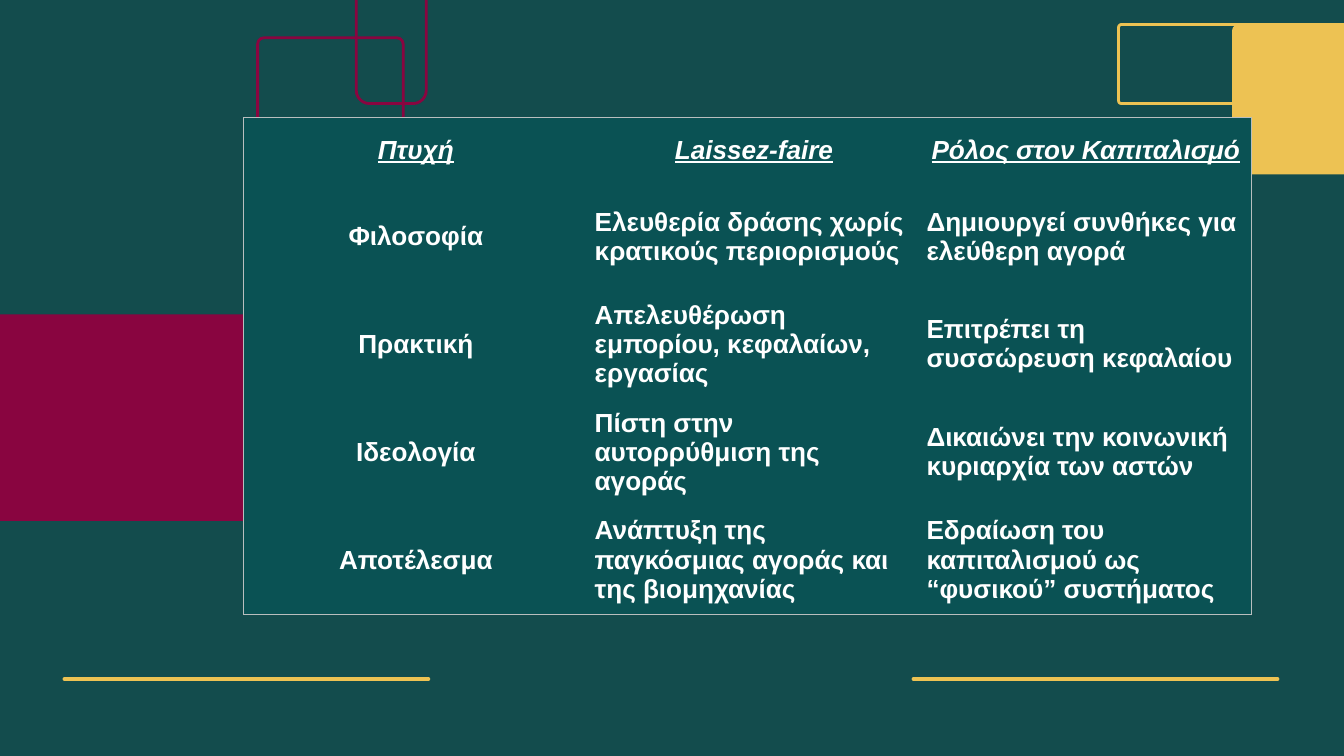
from lxml.etree import SubElement
from pptx import Presentation
from pptx.dml.color import RGBColor
from pptx.enum.shapes import MSO_CONNECTOR, MSO_SHAPE
from pptx.enum.text import MSO_ANCHOR, PP_ALIGN
from pptx.oxml import parse_xml
from pptx.oxml.ns import nsdecls, qn
from pptx.util import Pt

PX = 9525
SLIDE_WIDTH, SLIDE_HEIGHT = 1920, 1080
COLORS = {
    "background": "134C4D",
    "panel": "0A5254",
    "border": "B9BEBE",
    "text": "FFFFFF",
    "gold": "EDC253",
    "plum": "890540",
}

ROWS = [
    ("Πτυχή", "Laissez-faire", "Ρόλος στον Καπιταλισμό"),
    ("Φιλοσοφία", "Ελευθερία δράσης χωρίς κρατικούς περιορισμούς",
     "Δημιουργεί συνθήκες για ελεύθερη αγορά"),
    ("Πρακτική", "Απελευθέρωση εμπορίου, κεφαλαίων, εργασίας",
     "Επιτρέπει τη συσσώρευση κεφαλαίου"),
    ("Ιδεολογία", "Πίστη στην αυτορρύθμιση της αγοράς",
     "Δικαιώνει την κοινωνική κυριαρχία των αστών"),
    ("Αποτέλεσμα", "Ανάπτυξη της παγκόσμιας αγοράς και της βιομηχανίας",
     "Εδραίωση του καπιταλισμού ως “φυσικού” συστήματος"),
]
TABLE_LEFT, TABLE_TOP = 348, 168
COLUMN_WIDTHS = [492, 474, 474]
ROW_HEIGHTS = [93] + [154] * 4

RULE_TOP, RULE_LENGTH = 970, 520
RULE_LEFTS = [1305, 92]
# left, top, width, height, corner radius, color, filled
BLOCKS = [
    (-144, 449, 587, 295, 6, "plum", True),
    (1760, 35, 228, 214, 9, "gold", True),
    (1598, 35, 550, 113, 4, "gold", False),
    (509, -26, 100, 174, 19, "plum", False),
    (368, 54, 208, 196, 9, "plum", False),
]
BODY_FONT = {"name": "Arial", "size": Pt(28), "bold": True, "italic": False, "underline": False}
HEADER_FONT = BODY_FONT | {"italic": True, "underline": True}


def rgb(name):
    return RGBColor.from_string(COLORS[name])


def add_rule(slide, left):
    rule = slide.shapes.add_connector(
        MSO_CONNECTOR.STRAIGHT, left * PX, RULE_TOP * PX,
        (left + RULE_LENGTH) * PX, RULE_TOP * PX)
    rule.line.color.rgb = rgb("gold")
    rule.line.width = Pt(4)
    rule.line._get_or_add_ln().set("cap", "rnd")
    SubElement(rule._element.spPr, qn("a:effectLst"))


def add_block(slide, left, top, width, height, radius, color, filled):
    block = slide.shapes.add_shape(
        MSO_SHAPE.ROUNDED_RECTANGLE, left * PX, top * PX, width * PX, height * PX)
    block.adjustments[0] = radius / min(width, height)
    block.shadow.inherit = False
    if filled:
        block.fill.solid()
        block.fill.fore_color.rgb = rgb(color)
        block.line.fill.background()
    else:
        block.fill.background()
        block.line.color.rgb = rgb(color)
        block.line.width = Pt(3)


def set_borders(cell, edges):
    """Draw the sides that lie on the table's edge and clear the others."""
    properties = cell._tc.get_or_add_tcPr()
    for index, (side, on_edge) in enumerate(edges.items()):
        paint = (f'<a:solidFill><a:srgbClr val="{COLORS["border"]}"/></a:solidFill>'
                 if on_edge else "<a:noFill/>")
        properties.insert(index, parse_xml(
            f'<a:ln{side} {nsdecls("a")} w="{Pt(0.75)}">{paint}</a:ln{side}>'))


def fill_cell(cell, text, row, column):
    cell.text = text
    cell.vertical_anchor = MSO_ANCHOR.MIDDLE
    cell.fill.solid()
    cell.fill.fore_color.rgb = rgb("panel")
    paragraph = cell.text_frame.paragraphs[0]
    centred = row == 0 or column == 0
    paragraph.alignment = PP_ALIGN.CENTER if centred else PP_ALIGN.LEFT
    font = paragraph.runs[0].font
    for attribute, value in (HEADER_FONT if row == 0 else BODY_FONT).items():
        setattr(font, attribute, value)
    font.color.rgb = rgb("text")
    set_borders(cell, {
        "L": column == 0,
        "R": column == len(COLUMN_WIDTHS) - 1,
        "T": row == 0,
        "B": row == len(ROWS) - 1,
    })


def add_comparison(slide):
    comparison = slide.shapes.add_table(
        len(ROWS), len(COLUMN_WIDTHS), TABLE_LEFT * PX, TABLE_TOP * PX,
        sum(COLUMN_WIDTHS) * PX, sum(ROW_HEIGHTS) * PX).table
    comparison.first_row = comparison.horz_banding = False
    for column, width in zip(comparison.columns, COLUMN_WIDTHS):
        column.width = width * PX
    for row, height in zip(comparison.rows, ROW_HEIGHTS):
        row.height = height * PX
    for row, texts in enumerate(ROWS):
        for column, text in enumerate(texts):
            fill_cell(comparison.cell(row, column), text, row, column)


def main():
    deck = Presentation()
    deck.slide_width, deck.slide_height = SLIDE_WIDTH * PX, SLIDE_HEIGHT * PX
    slide = deck.slides.add_slide(deck.slide_layouts[6])
    slide.background.fill.solid()
    slide.background.fill.fore_color.rgb = rgb("background")
    for left in RULE_LEFTS:
        add_rule(slide, left)
    for block in BLOCKS:
        add_block(slide, *block)
    add_comparison(slide)
    deck.save("out.pptx")


if __name__ == "__main__":
    main()
